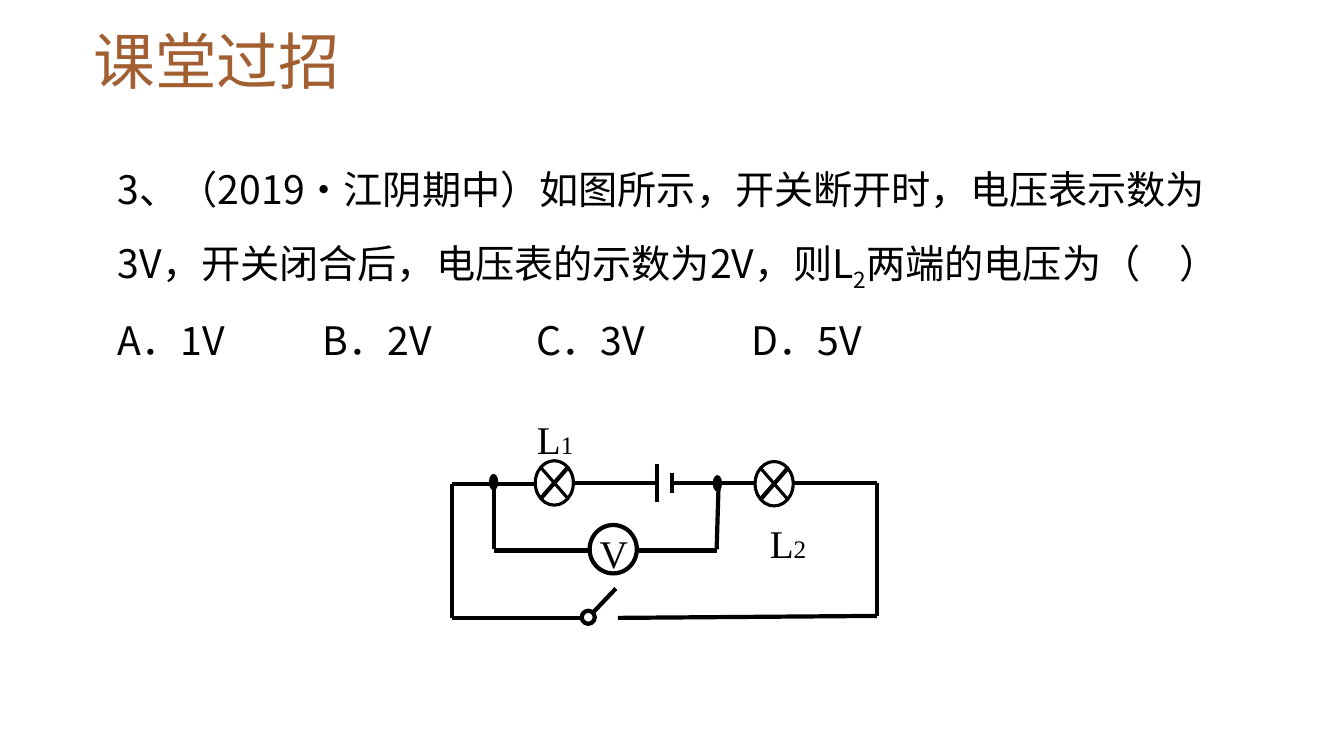
from pptx import Presentation
from pptx.dml.color import RGBColor
from pptx.enum.shapes import MSO_CONNECTOR, MSO_SHAPE
from pptx.enum.text import MSO_AUTO_SIZE
from pptx.oxml.ns import qn
from pptx.util import Cm, Pt
from lxml.etree import SubElement

SANS, SERIF = "Noto Sans CJK SC", "Times New Roman"
BLACK, BROWN = "000000", "A15F32"

deck = Presentation()
deck.slide_width, deck.slide_height = Cm(33.87), Cm(19.05)
slide = deck.slides.add_slide(deck.slide_layouts[6])
shapes = slide.shapes
color = RGBColor.from_string


def write(box, paragraphs, font, tint=BLACK, wrap=True):
    frame = shapes.add_textbox(*map(Cm, box)).text_frame
    frame.word_wrap = wrap
    frame.auto_size = MSO_AUTO_SIZE.SHAPE_TO_FIT_TEXT
    for index, pieces in enumerate(paragraphs):
        paragraph = frame.add_paragraph() if index else frame.paragraphs[0]
        for text, size, baseline in pieces:
            run = paragraph.add_run()
            run.text = text
            run.font.size = Pt(size)
            run.font.name = font
            run.font.color.rgb = color(tint)
            properties = run.font._element
            SubElement(properties, qn("a:ea")).set("typeface", font)
            if baseline:
                properties.set("baseline", str(baseline * 1000))
    return frame


write((2.11, 0.46, 10.57, 2.13), [[("课堂过招", 44, 0)]], SANS, BROWN)

question = [
    ("3、（2019·江阴期中）如图所示，开关断开时，电压表示数为3V，开关闭合后，电压表的示数为2V，则L", 28, 0),
    ("2", 28, -25),
    ("两端的电压为（\u3000）".replace("\u3000", "　"), 28, 0),
]
answers = [("A．1V\tB．2V\tC．3V\tD．5V", 28, 0)]
problem = write((2.72, 3.45, 28.35, 5.64), [question, answers], SANS)
for paragraph in problem.paragraphs:
    paragraph.line_spacing = 1.5
tab_list = SubElement(problem.paragraphs[1]._p.get_or_add_pPr(), qn("a:tabLst"))
for stop in (5.16, 10.55, 15.97):
    SubElement(tab_list, qn("a:tab"), pos=str(Cm(stop)), algn="l")

lamps = [(13.97, 12.17), (19.51, 12.19)]
rings = [(x - 0.48, y - 0.56, 0.96, 1.12, 2.25, None) for x, y in lamps]
rings += [
    (14.66, 15.39, 0.33, 0.33, 3, None),
    (14.86, 13.23, 1.19, 1.22, 3, None),
    (12.34, 11.96, 0.2, 0.38, 1, BLACK),
    (17.98, 11.99, 0.2, 0.38, 1, BLACK),
]
for left, top, width, height, weight, fill in rings:
    ring = shapes.add_shape(MSO_SHAPE.OVAL, Cm(left), Cm(top), Cm(width), Cm(height))
    ring.shadow.inherit = False
    if fill:
        ring.fill.solid()
        ring.fill.fore_color.rgb = color(fill)
    else:
        ring.fill.background()
    ring.line.color.rgb = color(BLACK)
    ring.line.width = Pt(weight)

wires = [
    (16.56, 11.68, 16.56, 12.65, 3),
    (16.94, 11.91, 16.94, 12.42, 3),
    (16.56, 12.17, 14.5, 12.17, 3),
    (19.02, 12.17, 16.97, 12.17, 3),
    (13.49, 12.19, 11.4, 12.19, 3),
    (22.1, 12.17, 20.02, 12.17, 3),
    (11.4, 12.19, 11.4, 15.57, 3),
    (11.4, 15.57, 14.66, 15.57, 3),
    (22.1, 12.17, 22.1, 15.52, 3),
    (14.94, 15.44, 15.52, 14.83, 3),
    (15.57, 15.57, 22.1, 15.52, 3),
    (12.45, 12.17, 12.45, 13.84, 3),
    (12.45, 13.87, 14.83, 13.87, 3),
    (16.1, 13.87, 18.08, 13.87, 3),
    (18.06, 13.84, 18.11, 12.19, 3),
]
for x, y in lamps:
    wires.append((x + 0.34, y - 0.39, x - 0.34, y + 0.39, 3))
    wires.append((x + 0.34, y + 0.39, x - 0.34, y - 0.39, 2.25))
for *ends, weight in wires:
    wire = shapes.add_connector(MSO_CONNECTOR.STRAIGHT, *map(Cm, ends))
    wire.line.color.rgb = color(BLACK)
    wire.line.width = Pt(weight)
    SubElement(wire._element.spPr, qn("a:effectLst"))

write((14.86, 13.21, 1.24, 1.45), [[("V", 28, 0)]], SERIF, wrap=False)
write((13.28, 10.34, 1.7, 1.45), [[("L", 28, 0), ("1", 18, 0)]], SERIF)
write((19.15, 12.95, 1.45, 1.45), [[("L", 28, 0), ("2", 18, 0)]], SERIF)

deck.save("out.pptx")
